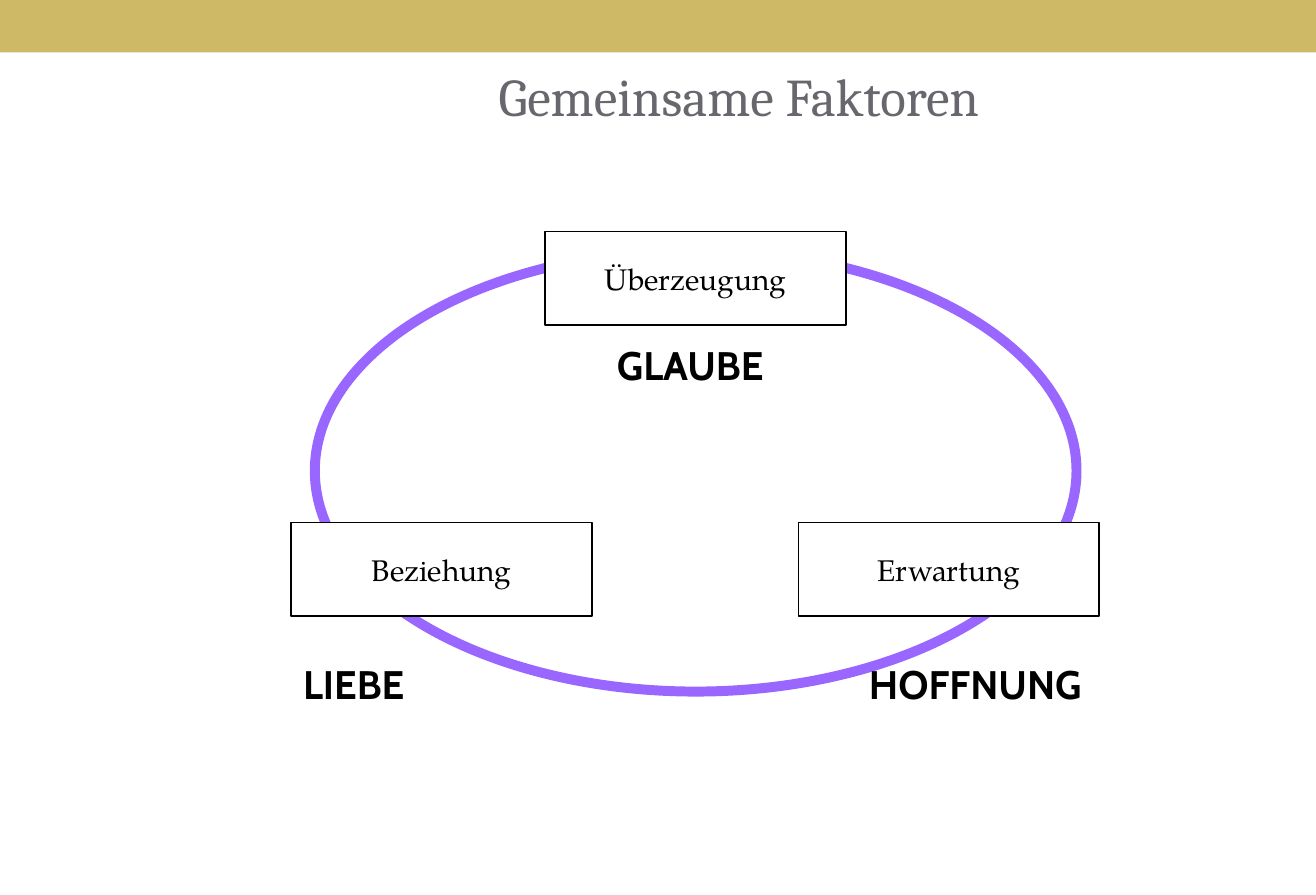
from pptx import Presentation
from pptx.dml.color import RGBColor
from pptx.enum import shapes, text
from pptx.util import Pt

HUES = {
    "band": "CEB966",
    "ring": "9966FF",
    "title": "69676D",
    "ink": "000000",
    "paper": "FFFFFF",
}
KIND = shapes.MSO_SHAPE
ALIGN = text.PP_ALIGN
MIDDLE = text.MSO_ANCHOR.MIDDLE


def hue(name):
    return RGBColor.from_string(HUES[name])


def draw(slide, kind, area, fill=None, line=None, width=1):
    """Add a preset shape; without a fill or line colour that part is empty."""
    shape = slide.shapes.add_shape(kind, *map(Pt, area))
    shape.shadow.inherit = False
    if fill:
        shape.fill.solid()
        shape.fill.fore_color.rgb = hue(fill)
    else:
        shape.fill.background()
    if line:
        shape.line.color.rgb = hue(line)
        shape.line.width = Pt(width)
    else:
        shape.line.fill.background()
    return shape


def write(shape, words, face, size, color="ink", align=ALIGN.CENTER, bold=False):
    line = shape.text_frame.paragraphs[0]
    line.text = words
    line.alignment = align
    font = line.font
    font.name, font.size, font.bold = face, Pt(size), bold
    font.color.rgb = hue(color)


def factor(slide, words, left, top):
    box = draw(slide, KIND.RECTANGLE, (left, top, 181.4, 56.6), "paper", "ink")
    box.text_frame.word_wrap = False
    box.text_frame.vertical_anchor = MIDDLE
    write(box, words, "TeX Gyre Pagella", 18)


def virtue(slide, words, left, top, width):
    box = slide.shapes.add_textbox(*map(Pt, (left, top, width, 36)))
    box.text_frame.word_wrap = False
    box.text_frame.auto_size = text.MSO_AUTO_SIZE.SHAPE_TO_FIT_TEXT
    write(box, words, "Cabin", 24, align=ALIGN.LEFT, bold=True)


def title(slide, words):
    box = slide.shapes.add_textbox(*map(Pt, (134.4, 31.7, 622.8, 51.8)))
    box.text_frame.word_wrap = True
    box.text_frame.vertical_anchor = MIDDLE
    write(box, words, "Cambria", 32, "title")


def main():
    deck = Presentation()
    deck.slide_width, deck.slide_height = Pt(793.75), Pt(540)
    slide = deck.slides.add_slide(deck.slide_layouts[6])

    draw(slide, KIND.RECTANGLE, (-15.8, -7.9, 843.8, 39.6), "band")
    draw(slide, KIND.OVAL, (189.9, 150.9, 459.4, 266.4), line="ring", width=6)

    for words, left, top in (
        ("Überzeugung", 328.8, 139.6),
        ("Erwartung", 481.7, 315.2),
        ("Beziehung", 175.7, 315.2),
    ):
        factor(slide, words, left, top)

    for words, left, top, width in (
        ("GLAUBE", 365, 202.1, 111.6),
        ("LIEBE", 175.7, 394.4, 85.7),
        ("HOFFNUNG", 517, 394.4, 151.9),
    ):
        virtue(slide, words, left, top, width)

    title(slide, "Gemeinsame Faktoren")
    deck.save("out.pptx")


if __name__ == "__main__":
    main()
